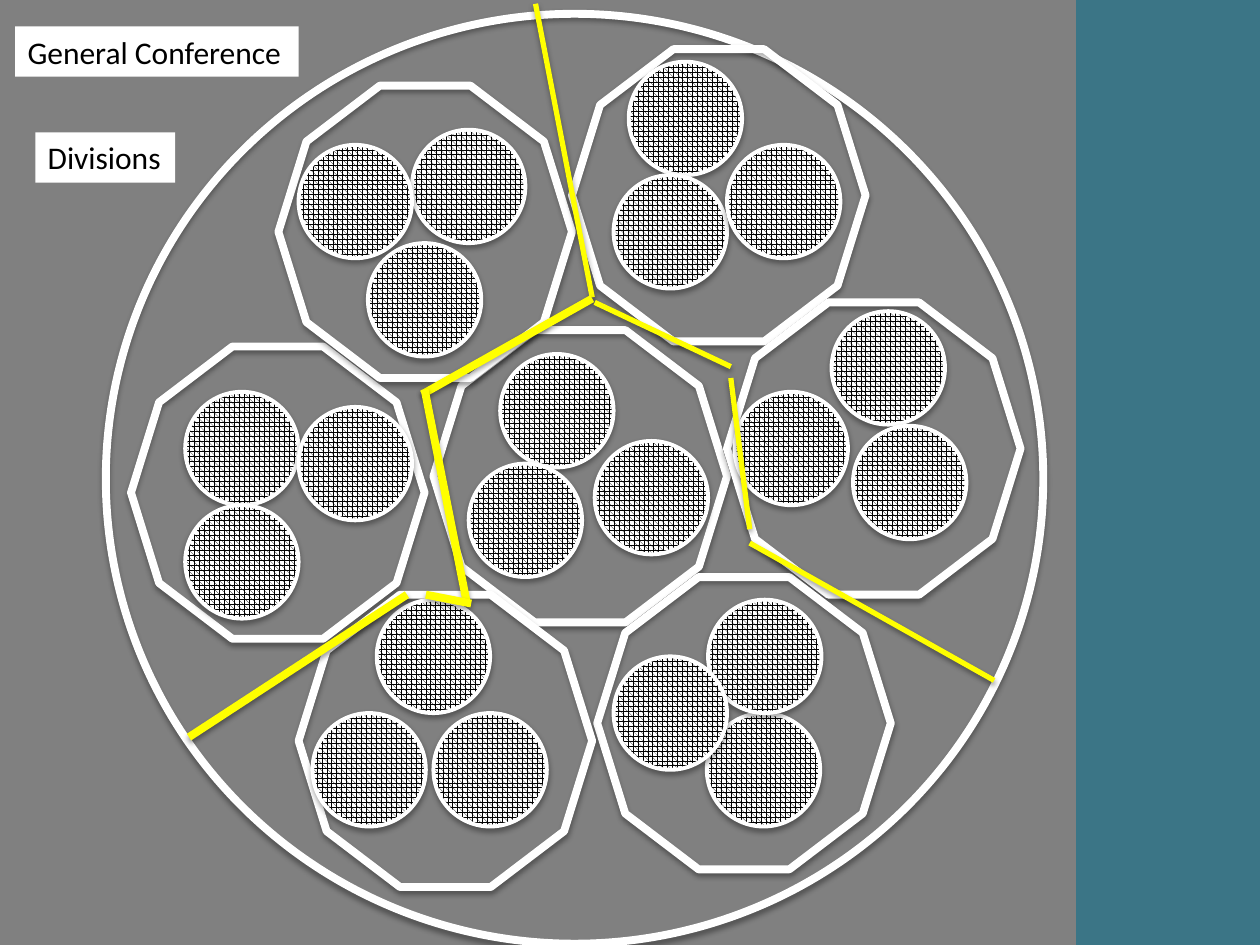
import pptx
import pptx.dml.color
import pptx.enum.dml
import pptx.enum.shapes
import pptx.enum.text
import pptx.oxml
import pptx.oxml.ns
import pptx.util
from pptx.util import Inches

RGBColor = pptx.dml.color.RGBColor
MSO_SHAPE = pptx.enum.shapes.MSO_SHAPE

GRAY = RGBColor(0x80, 0x80, 0x80)
TEAL = RGBColor(0x30, 0x74, 0x87)
WHITE = RGBColor(0xFF, 0xFF, 0xFF)
BLACK = RGBColor(0x00, 0x00, 0x00)
YELLOW = RGBColor(0xFF, 0xFF, 0x00)

DIVISION_WIDTH, DIVISION_HEIGHT = 2.33, 2.32
UNION_SIZE = 0.9

DIVISIONS = [
    ((3.44, 2.62), [(3.97, 2.81), (4.72, 3.5), (3.72, 3.68)]),
    ((1.04, 2.75), [(1.47, 3.11), (1.47, 4.01), (2.37, 3.23)]),
    ((2.21, 0.68), [(3.27, 1.03), (2.37, 1.15), (2.92, 1.93)]),
    ((4.54, 0.39), [(4.99, 0.49), (4.87, 1.39), (5.77, 1.15)]),
    ((5.77, 2.4), [(6.6, 2.47), (5.83, 3.11), (6.77, 3.38)]),
    ((4.74, 4.58), [(5.61, 5.66), (5.62, 4.76), (4.87, 5.21)]),
    ((2.37, 4.72), [(3.44, 5.66), (2.48, 5.66), (2.99, 4.76)]),
]

BOUNDARIES = [
    ((4.25, 0.03), (4.7, 2.36), 3),
    ((4.7, 2.37), (3.35, 3.13), 4.5),
    ((4.72, 2.4), (5.8, 2.91), 3),
    ((3.37, 3.09), (3.7, 4.76), 4.5),
    ((5.8, 3), (5.95, 4.2), 3),
    ((5.95, 4.31), (7.89, 5.4), 3),
    ((3.38, 4.72), (3.74, 4.79), 4.5),
    ((3.23, 4.72), (1.5, 5.85), 4.5),
]


class DiagramSlide:
    font_name = "Calibri"
    font_size = pptx.util.Pt(18)

    def __init__(self, slide):
        self.slide = slide
        slide.background.fill.solid()
        slide.background.fill.fore_color.rgb = GRAY

    def add_shadow(self, shape, distance, opacity):
        shape._element.spPr.append(pptx.oxml.parse_xml(
            f'<a:effectLst {pptx.oxml.ns.nsdecls("a")}>'
            f'<a:outerShdw blurRad="{pptx.util.Pt(3.1)}" dist="{pptx.util.Pt(distance)}" '
            'dir="5400000" rotWithShape="0">'
            f'<a:srgbClr val="{BLACK}"><a:alpha val="{opacity * 1000}"/></a:srgbClr>'
            '</a:outerShdw></a:effectLst>'))

    def add_panel(self, left, top, width, height, opacity):
        shape = self.slide.shapes.add_shape(
            MSO_SHAPE.RECTANGLE, Inches(left), Inches(top), Inches(width), Inches(height))
        shape.shadow.inherit = False
        shape.line.fill.background()
        shape.fill.solid()
        shape.fill.fore_color.rgb = TEAL
        color = shape._element.spPr.find(".//" + pptx.oxml.ns.qn("a:srgbClr"))
        color.append(pptx.oxml.parse_xml(
            f'<a:alpha {pptx.oxml.ns.nsdecls("a")} val="{opacity * 1000}"/>'))

    def add_outline(self, kind, left, top, width, height, weight=4.5, patterned=False):
        shape = self.slide.shapes.add_shape(
            kind, Inches(left), Inches(top), Inches(width), Inches(height))
        if patterned:
            shape.fill.patterned()
            shape.fill.pattern = pptx.enum.dml.MSO_PATTERN.SPHERE
            shape.fill.fore_color.rgb = BLACK
            shape.fill.back_color.rgb = WHITE
        else:
            shape.fill.background()
        shape.line.color.rgb = WHITE
        shape.line.width = pptx.util.Pt(weight)
        self.add_shadow(shape, 1.8, 35)

    def add_division(self, left, top):
        self.add_outline(MSO_SHAPE.DECAGON, left, top, DIVISION_WIDTH, DIVISION_HEIGHT)

    def add_union(self, left, top):
        self.add_outline(MSO_SHAPE.OVAL, left, top, UNION_SIZE, UNION_SIZE, 2.25, True)

    def add_boundary(self, start, end, weight):
        connector = self.slide.shapes.add_connector(
            pptx.enum.shapes.MSO_CONNECTOR.STRAIGHT,
            *(Inches(value) for value in (*start, *end)))
        connector.line.color.rgb = YELLOW
        connector.line.width = pptx.util.Pt(weight)
        self.add_shadow(connector, 1.6, 38)

    def add_label(self, text, left, top, width):
        shape = self.slide.shapes.add_textbox(
            Inches(left), Inches(top), Inches(width), Inches(0.4))
        shape.fill.solid()
        shape.fill.fore_color.rgb = WHITE
        frame = shape.text_frame
        frame.word_wrap = False
        frame.auto_size = pptx.enum.text.MSO_AUTO_SIZE.SHAPE_TO_FIT_TEXT
        run = frame.paragraphs[0].add_run()
        run.text = text
        run.font.name = self.font_name
        run.font.size = self.font_size
        run.font.color.rgb = BLACK


def main():
    presentation = pptx.Presentation()
    presentation.slide_width = Inches(10)
    presentation.slide_height = Inches(7.5)
    blank_layout = presentation.slide_layouts[6]
    diagram = DiagramSlide(presentation.slides.add_slide(blank_layout))

    diagram.add_panel(8.54, 0, 1.46, 7.5, 86)
    diagram.add_outline(MSO_SHAPE.OVAL, 0.84, 0.11, 7.44, 7.38)
    diagram.add_label("General Conference", 0.12, 0.21, 2.25)
    for position, _ in DIVISIONS:
        diagram.add_division(*position)
    for _, unions in DIVISIONS:
        for position in unions:
            diagram.add_union(*position)
    for start, end, weight in BOUNDARIES:
        diagram.add_boundary(start, end, weight)
    diagram.add_label("Divisions", 0.28, 1.05, 1.11)

    presentation.save("out.pptx")


if __name__ == "__main__":
    main()
